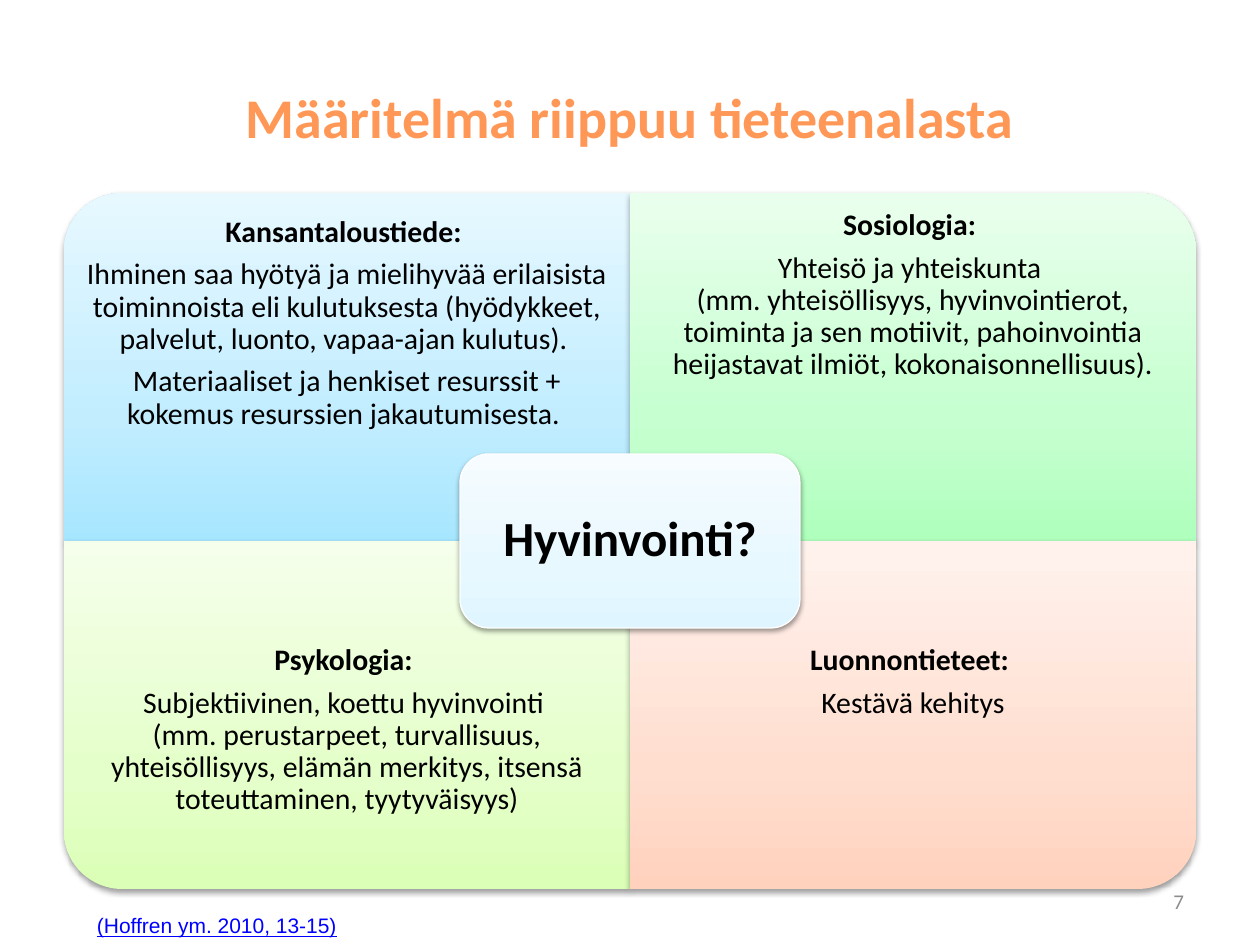
"""Build a slide on how the definition of wellbeing varies by discipline."""
from dataclasses import dataclass

from pptx import Presentation
from pptx.dml.color import RGBColor
from pptx.enum.shapes import MSO_SHAPE as Shape
from pptx.enum.text import MSO_ANCHOR as Anchor, PP_ALIGN as Align
from pptx.oxml import parse_xml
from pptx.oxml.ns import nsdecls, qn
from pptx.util import Emu, Pt

PX_PER_INCH = 126
SCALE = 914400 / PX_PER_INCH

ORANGE = RGBColor(0xFF, 0x98, 0x56)
GREY = RGBColor(0x8C, 0x8C, 0x8C)
BLUE = RGBColor(0x00, 0x00, 0xFF)
BLACK = RGBColor(0x00, 0x00, 0x00)
WHITE = RGBColor(0xFF, 0xFF, 0xFF)
SKY = RGBColor(0xA7, 0xE6, 0xFF), RGBColor(0xC1, 0xED, 0xFF), RGBColor(0xE7, 0xF8, 0xFF)
MINT = RGBColor(0xAF, 0xFF, 0xBD), RGBColor(0xC6, 0xFF, 0xD0), RGBColor(0xE9, 0xFF, 0xED)
LIME = RGBColor(0xDB, 0xFF, 0xB6), RGBColor(0xE5, 0xFF, 0xCB), RGBColor(0xF5, 0xFF, 0xEB)
PEACH = RGBColor(0xFF, 0xD2, 0xBD), RGBColor(0xFF, 0xDE, 0xD0), RGBColor(0xFF, 0xF2, 0xED)
ICE = RGBColor(0xDF, 0xF5, 0xFF), RGBColor(0xE8, 0xF8, 0xFF), RGBColor(0xF6, 0xFC, 0xFF)
STOPS = 0, 35000, 100000

CENTRE_X, CENTRE_Y = 630, 541
PANEL_W, PANEL_H = 566, 348
TEXT_H = 261
HUB_W, HUB_H = 340, 174
HUB_PAD = 8

TITLE = {"name": "Calibri", "size": Pt(32), "bold": True}
HEADING = {"name": "Calibri", "size": Pt(17), "bold": True}
BODY = {"name": "Calibri", "size": Pt(17), "bold": False}
HUB = {"name": "Calibri", "size": Pt(28), "bold": True}
NUMBER = {"name": "Calibri", "size": Pt(12)}
SOURCE = {"name": "Arial", "size": Pt(12), "underline": True}


@dataclass(frozen=True)
class Box:
    x: int
    y: int
    w: int
    h: int

    def emu(self) -> list[Emu]:
        return [Emu(round(v * SCALE)) for v in (self.x, self.y, self.w, self.h)]


@dataclass(frozen=True)
class Para:
    text: str
    font: dict
    color: RGBColor = BLACK
    after: int = 6
    spacing: float = 0.9
    align: Align = Align.CENTER


@dataclass(frozen=True)
class Panel:
    col: int
    row: int
    rotation: int
    colors: tuple
    anchor: Anchor
    paras: tuple


PANELS = (
    Panel(0, 0, 270, SKY, Anchor.MIDDLE, (
        Para("Kansantaloustiede: ", HEADING),
        Para("Ihminen saa hyötyä ja mielihyvää erilaisista toiminnoista eli kulutuksesta "
             "(hyödykkeet, palvelut, luonto, vapaa-ajan kulutus). ", BODY),
        Para("Materiaaliset ja henkiset resurssit + kokemus resurssien jakautumisesta. ", BODY))),
    Panel(1, 0, 0, MINT, Anchor.TOP, (
        Para("Sosiologia: ", HEADING),
        Para("Yhteisö ja yhteiskunta ", BODY, after=0),
        Para("(mm. yhteisöllisyys, hyvinvointierot, toiminta ja sen motiivit, pahoinvointia "
             "heijastavat ilmiöt, kokonaisonnellisuus).", BODY))),
    Panel(0, 1, 180, LIME, Anchor.TOP, (
        Para("Psykologia: ", HEADING),
        Para("Subjektiivinen, koettu hyvinvointi ", BODY, after=0),
        Para("(mm. perustarpeet, turvallisuus, yhteisöllisyys, elämän merkitys, itsensä "
             "toteuttaminen, tyytyväisyys)", BODY))),
    Panel(1, 1, 90, PEACH, Anchor.TOP, (
        Para("Luonnontieteet: ", HEADING),
        Para("Kestävä kehitys", BODY))),
)


def add_text(s, box: Box, paras: tuple, anchor: Anchor = Anchor.TOP,
             inset: tuple[int, int] = (13, 6)) -> None:
    tf = s.shapes.add_textbox(*box.emu()).text_frame
    dx, dy = (Emu(round(v * SCALE)) for v in inset)
    layout = {"word_wrap": True, "vertical_anchor": anchor, "margin_left": dx,
              "margin_right": dx, "margin_top": dy, "margin_bottom": dy}
    for key, value in layout.items():
        setattr(tf, key, value)
    for i, para in enumerate(paras):
        p = tf.add_paragraph() if i else tf.paragraphs[0]
        p.alignment, p.line_spacing, p.space_after = para.align, para.spacing, Pt(para.after)
        r = p.add_run()
        r.text = para.text
        for key, value in para.font.items():
            setattr(r.font, key, value)
        r.font.color.rgb = para.color


def add_tile(s, kind: Shape, box: Box, colors: tuple, rotation: int = 0):
    sp = s.shapes.add_shape(kind, *box.emu())
    sp.rotation = rotation
    sp.fill.background()
    sp.line.fill.background()
    sp.shadow.inherit = False
    spPr = sp._element.spPr
    stops = "".join(f'<a:gs pos="{pos}"><a:srgbClr val="{color}"/></a:gs>'
                    for pos, color in zip(STOPS, colors))
    spPr.replace(spPr.find(qn("a:noFill")), parse_xml(
        f'<a:gradFill {nsdecls("a")} rotWithShape="0"><a:gsLst>{stops}</a:gsLst>'
        '<a:lin ang="16200000" scaled="0"/></a:gradFill>'))
    spPr.find(qn("a:effectLst")).append(parse_xml(
        f'<a:outerShdw {nsdecls("a")} blurRad="40000" dist="20000" dir="5400000" '
        'rotWithShape="0"><a:srgbClr val="000000"><a:alpha val="38000"/></a:srgbClr>'
        '</a:outerShdw>'))
    return sp


def add_panel(s, panel: Panel) -> None:
    x = CENTRE_X + (panel.col - 1) * PANEL_W
    y = CENTRE_Y + (panel.row - 1) * PANEL_H
    w, h = (PANEL_H, PANEL_W) if panel.rotation % 180 else (PANEL_W, PANEL_H)
    tile = Box(x + (PANEL_W - w) // 2, y + (PANEL_H - h) // 2, w, h)
    add_tile(s, Shape.ROUND_1_RECTANGLE, tile, panel.colors, panel.rotation)
    text_y = y + panel.row * (PANEL_H - TEXT_H)
    add_text(s, Box(x, text_y, PANEL_W, TEXT_H), panel.paras, panel.anchor, (17, 17))


def add_hub(s) -> None:
    x, y = CENTRE_X - HUB_W // 2, CENTRE_Y - HUB_H // 2
    sp = add_tile(s, Shape.ROUNDED_RECTANGLE, Box(x, y, HUB_W, HUB_H), ICE)
    sp.line.color.rgb = WHITE
    sp.line.width = Pt(0.75)
    inner = Box(x + HUB_PAD, y + HUB_PAD, HUB_W - 2 * HUB_PAD, HUB_H - 2 * HUB_PAD)
    add_text(s, inner, (Para("Hyvinvointi?", HUB),), Anchor.MIDDLE, (15, 15))


def main() -> None:
    prs = Presentation()
    prs.slide_width, prs.slide_height = Box(0, 0, 1260, 945).emu()[2:]
    s = prs.slides.add_slide(prs.slide_layouts[6])
    add_text(s, Box(63, 38, 1134, 157),
             (Para("Määritelmä riippuu tieteenalasta", TITLE, ORANGE, 0, 1.0),), Anchor.MIDDLE)
    add_text(s, Box(903, 876, 294, 50),
             (Para("7", NUMBER, GREY, 0, 1.0, Align.RIGHT),), Anchor.MIDDLE)
    for panel in PANELS:
        add_panel(s, panel)
    add_hub(s)
    add_text(s, Box(84, 907, 605, 38),
             (Para("(Hoffren ym. 2010, 13-15)", SOURCE, BLUE, 0, 1.0, Align.LEFT),))
    prs.save("out.pptx")


if __name__ == "__main__":
    main()
